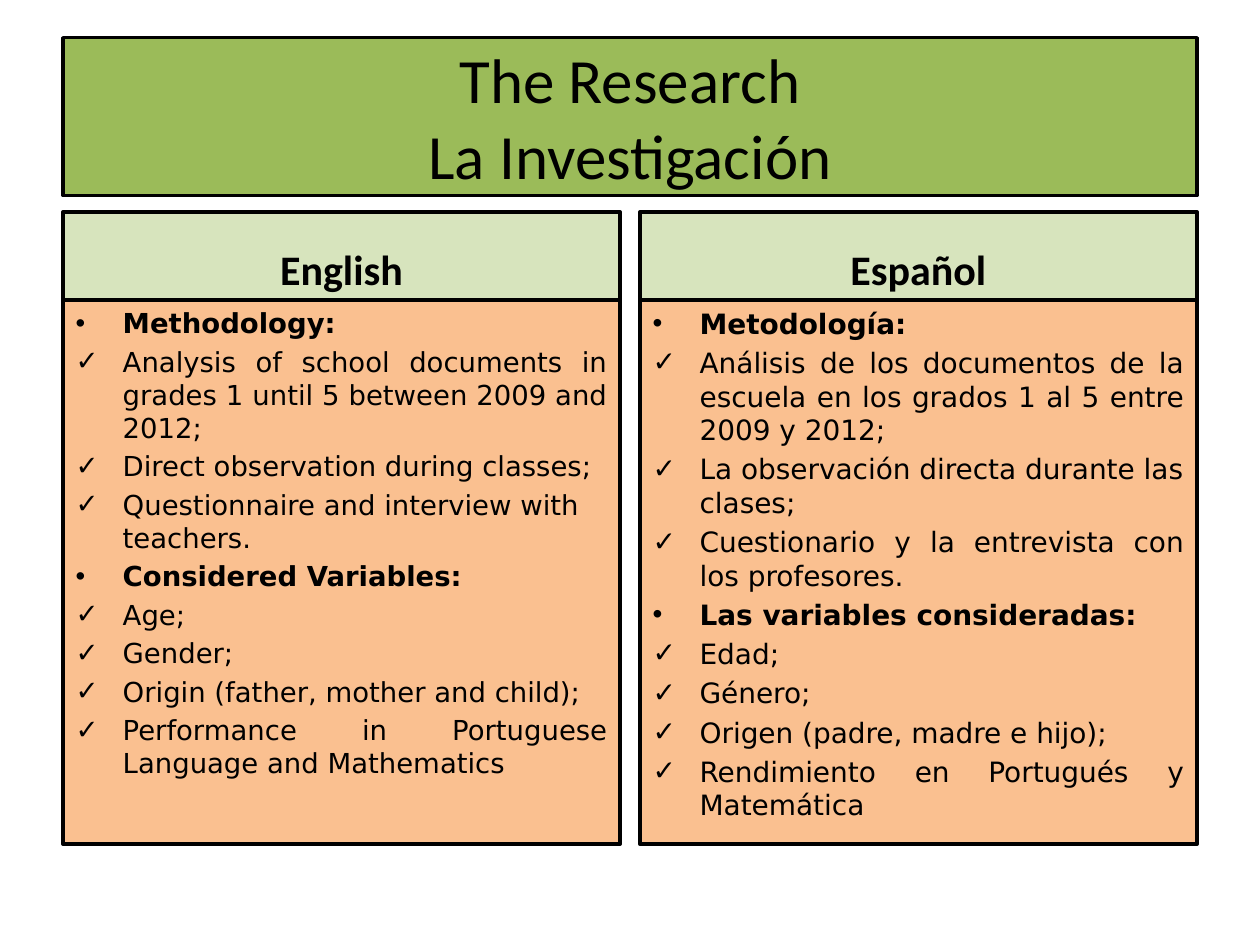
from lxml import etree
from pptx import Presentation
from pptx.dml.color import RGBColor
from pptx.enum.text import MSO_ANCHOR, MSO_AUTO_SIZE, PP_ALIGN
from pptx.oxml.ns import qn
from pptx.util import Cm, Pt

BLACK = RGBColor(0x00, 0x00, 0x00)
GREEN = RGBColor(0x9B, 0xBB, 0x59)
PALE_GREEN = RGBColor(0xD7, 0xE4, 0xBD)
ORANGE = RGBColor(0xFA, 0xC0, 0x90)

LEFT, WIDTH, GAP = 1.27, 22.86, 0.4
COLUMN_W = (WIDTH - GAP) / 2
HEADER_H = 1.78
INDENT = Cm(0.95)

HEADING, ITEM, JUSTIFIED = "heading", "item", "justified"

ENGLISH = [
    (HEADING, "Methodology:"),
    (JUSTIFIED, "Analysis of school documents in grades 1 until 5 between 2009 and 2012;"),
    (ITEM, "Direct observation during classes;"),
    (ITEM, "Questionnaire and interview with teachers."),
    (HEADING, "Considered Variables:"),
    (ITEM, "Age;"),
    (ITEM, "Gender;"),
    (ITEM, "Origin (father, mother and child);"),
    (JUSTIFIED, "Performance in Portuguese Language and Mathematics"),
]
SPANISH = [
    (HEADING, "Metodología:"),
    (JUSTIFIED, "Análisis de los documentos de la escuela en los grados 1 al 5 entre 2009 y 2012;"),
    (ITEM, "La observación directa durante las clases;"),
    (JUSTIFIED, "Cuestionario y la entrevista con los profesores."),
    (HEADING, "Las variables consideradas:"),
    (ITEM, "Edad;"),
    (ITEM, "Género;"),
    (ITEM, "Origen (padre, madre e hijo);"),
    (JUSTIFIED, "Rendimiento en Portugués y Matemática"),
]


def set_attrs(obj, values):
    for name, value in values.items():
        setattr(obj, name, value)


def format_box(sp, box, fill, anchor):
    """Place a placeholder at box (left, top, width, height in cm) and frame it."""
    set_attrs(sp, dict(zip(("left", "top", "width", "height"), map(Cm, box))))
    sp.fill.solid()
    sp.fill.fore_color.rgb = fill
    sp.line.color.rgb = BLACK
    sp.line.width = Pt(2)
    set_attrs(sp.text_frame, {"vertical_anchor": anchor, "word_wrap": True,
                              "auto_size": MSO_AUTO_SIZE.NONE})


def format_font(p, size, name="Calibri", bold=False):
    for r in p.runs:
        set_attrs(r.font, {"size": Pt(size), "name": name, "bold": bold})
        r.font.color.rgb = BLACK


def set_bullet(p, char, font):
    pPr = p._p.get_or_add_pPr()
    pPr.set("marL", str(INDENT))
    pPr.set("indent", str(-INDENT))
    etree.SubElement(pPr, qn("a:buFont")).set("typeface", font)
    etree.SubElement(pPr, qn("a:buChar")).set("char", char)


def add_heading(sp, box, text, size, fill, anchor, bold=False):
    format_box(sp, box, fill, anchor)
    sp.text_frame.text = text
    p = sp.text_frame.paragraphs[0]
    p.alignment = PP_ALIGN.CENTER
    format_font(p, size, bold=bold)


def add_list(sp, box, items, size):
    format_box(sp, box, ORANGE, MSO_ANCHOR.TOP)
    tf = sp.text_frame
    for i, (kind, text) in enumerate(items):
        p = tf.add_paragraph() if i else tf.paragraphs[0]
        p.text = text
        p.alignment = PP_ALIGN.JUSTIFY if kind == JUSTIFIED else PP_ALIGN.LEFT
        if kind == HEADING:
            set_bullet(p, "•", "Arial")
        else:
            set_bullet(p, "✓", "DejaVu Sans")
        format_font(p, size, "DejaVu Sans", kind == HEADING)


def add_column(header, body, box, language, items, size):
    left, top, width, height = box
    add_heading(header, (left, top, width, HEADER_H), language, 24,
                PALE_GREEN, MSO_ANCHOR.BOTTOM, bold=True)
    add_list(body, (left, top + HEADER_H, width, height - HEADER_H), items, size)


def main():
    prs = Presentation()
    prs.slide_width, prs.slide_height = Cm(25.4), Cm(19.05)
    s = prs.slides.add_slide(prs.slide_layouts.get_by_name("Comparison"))
    title, *bodies = list(s.placeholders)[:5]
    add_heading(title, (LEFT, 0.76, WIDTH, 3.18), "The Research\vLa Investigación",
                36, GREEN, MSO_ANCHOR.MIDDLE)
    columns = [("English", ENGLISH, 15.7), ("Español", SPANISH, 16)]
    for i, column in enumerate(columns):
        box = (LEFT + i * (COLUMN_W + GAP), 4.27, COLUMN_W, 12.75)
        add_column(*bodies[2 * i:2 * i + 2], box, *column)
    prs.save("out.pptx")


if __name__ == "__main__":
    main()
